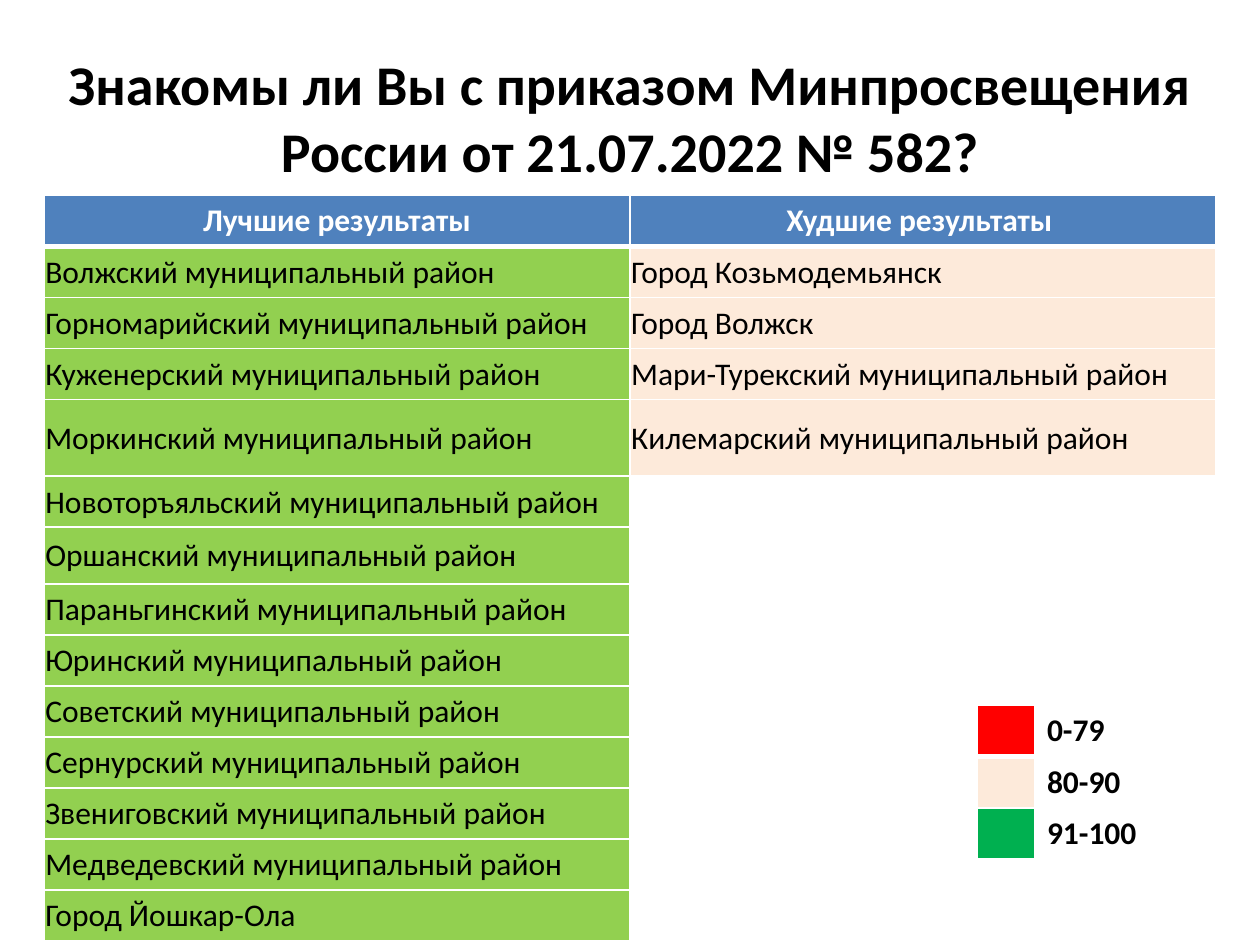
from dataclasses import dataclass
from itertools import zip_longest

from lxml.etree import SubElement
from pptx import Presentation
from pptx.dml.color import RGBColor
from pptx.enum.text import MSO_ANCHOR, PP_ALIGN
from pptx.oxml.ns import qn
from pptx.util import Inches, Pt


@dataclass(frozen=True)
class Theme:
    font: str = "Calibri"
    title: int = 32
    body: int = 18
    black: str = "000000"
    white: str = "FFFFFF"
    blue: str = "4F81BD"
    lime: str = "92D050"
    peach: str = "FDEADA"
    red: str = "FF0000"
    green: str = "00B050"


theme = Theme()


def style(par, size, color, bold=False, align=PP_ALIGN.LEFT):
    par.alignment = align
    par.font.name = theme.font
    par.font.size = Pt(size)
    par.font.bold = bold
    par.font.color.rgb = RGBColor.from_string(color)


def paint(cell, fill, thick):
    """Give a cell white borders and a fill; a thick row has a 3 pt lower edge."""
    props = cell._tc.get_or_add_tcPr()
    for side in "LRTB":
        width = Pt(3 if thick and side == "B" else 1)
        line = SubElement(props, qn(f"a:ln{side}"), w=str(width))
        solid = SubElement(line, qn("a:solidFill"))
        SubElement(solid, qn("a:srgbClr"), val=theme.white)
    if fill:
        cell.fill.solid()
        cell.fill.fore_color.rgb = RGBColor.from_string(fill)
    else:
        cell.fill.background()


best = [f"{name} муниципальный район" for name in (
    "Волжский", "Горномарийский", "Куженерский", "Моркинский",
    "Новоторъяльский", "Оршанский", "Параньгинский", "Юринский",
    "Советский", "Сернурский", "Звениговский", "Медведевский",
)] + ["Город Йошкар-Ола"]
worst = [
    "Город Козьмодемьянск",
    "Город Волжск",
    "Мари-Турекский муниципальный район",
    "Килемарский муниципальный район",
]
heads = ("Лучшие результаты", "Худшие результаты ")
bands = [(theme.red, "0-79"), (theme.peach, "80-90"), (theme.green, "91-100")]

deck = Presentation()
deck.slide_width, deck.slide_height = Inches(10), Inches(7.5)
slide = deck.slides.add_slide(deck.slide_layouts[6])

# Title
box = slide.shapes.add_textbox(Inches(0), Inches(0.3), Inches(10), Inches(1.25))
frame = box.text_frame
frame.word_wrap = True
frame.vertical_anchor = MSO_ANCHOR.MIDDLE
frame.text = "Знакомы ли Вы с приказом Минпросвещения России от 21.07.2022 № 582?"
style(frame.paragraphs[0], theme.title, theme.black, True, PP_ALIGN.CENTER)

# Results
rows = [heads, *zip_longest(best, worst, fillvalue="")]
high = {4: 0.61, 6: 0.45}
grid = slide.shapes.add_table(
    len(rows), 2, Inches(0.35), Inches(1.55), Inches(9.3), Inches(5.92)).table
grid.horz_banding = False
for r, texts in enumerate(rows):
    grid.rows[r].height = Inches(high.get(r, 0.405))
    for c, text in enumerate(texts):
        cell = grid.cell(r, c)
        cell.text = text
        par = cell.text_frame.paragraphs[0]
        if r == 0:
            paint(cell, theme.blue, True)
            style(par, theme.body, theme.white, True, PP_ALIGN.CENTER)
            continue
        paint(cell, (theme.lime, theme.peach)[c] if text else None, False)
        style(par, theme.body, theme.black)
        cell.vertical_anchor = MSO_ANCHOR.MIDDLE
        cell.margin_left = cell.margin_right = cell.margin_top = Inches(0.01)
        cell.margin_bottom = Inches(0)

# Legend
key = slide.shapes.add_table(
    len(bands), 2, Inches(7.76), Inches(5.6), Inches(2.05), Inches(1.22)).table
key.horz_banding = False
key.columns[0].width, key.columns[1].width = Inches(0.45), Inches(1.6)
for r, (color, label) in enumerate(bands):
    for c, (fill, text) in enumerate([(color, ""), (theme.white, label)]):
        cell = key.cell(r, c)
        cell.text = text
        paint(cell, fill, r == 0)
        style(cell.text_frame.paragraphs[0], theme.body, theme.black, True)

deck.save("out.pptx")
